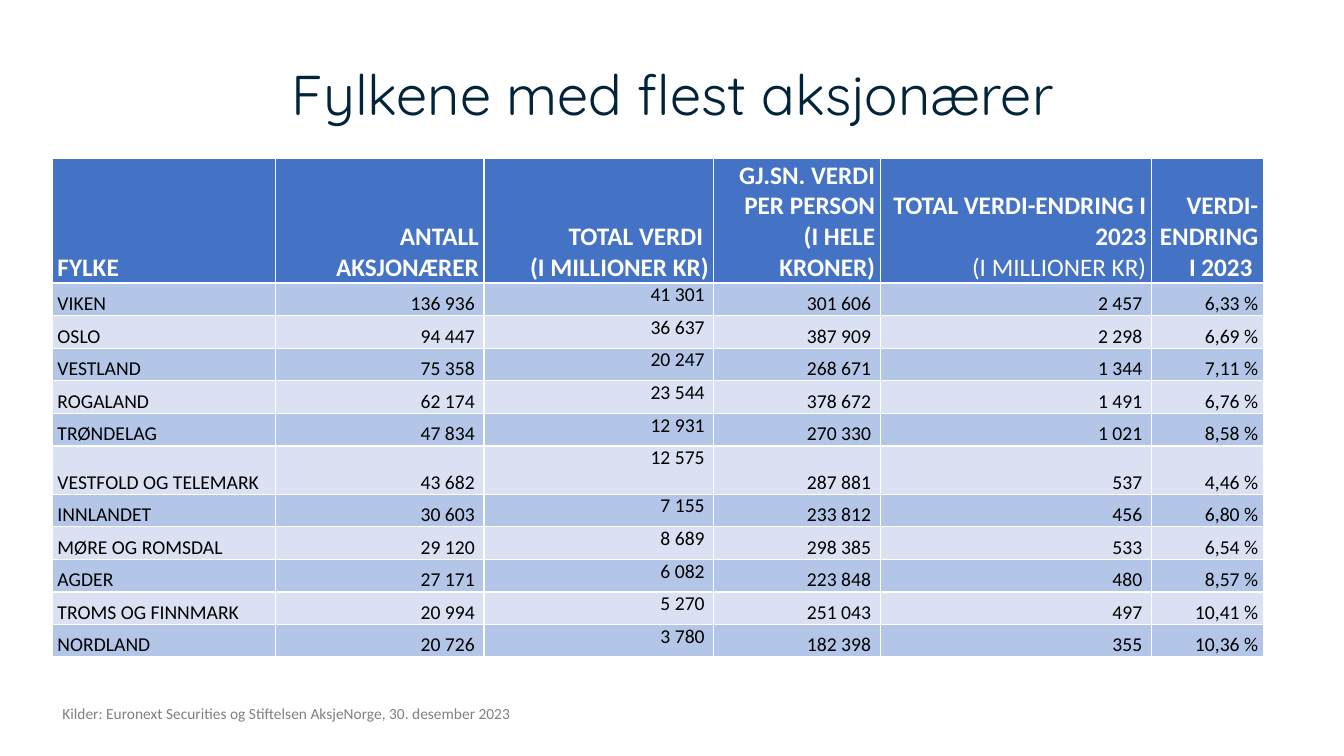
from lxml.etree import SubElement
from pptx import Presentation
from pptx.dml.color import RGBColor
from pptx.enum.text import MSO_ANCHOR as ANCHOR, MSO_AUTO_SIZE as FIT, PP_ALIGN as ALIGN
from pptx.oxml.ns import qn
from pptx.util import Inches, Pt

NAVY = RGBColor(0x02, 0x24, 0x3A)
GREY = RGBColor(0x80, 0x80, 0x80)
WHITE = RGBColor(0xFF, 0xFF, 0xFF)
BLACK = RGBColor(0x00, 0x00, 0x00)
HEADER_BLUE = RGBColor(0x44, 0x72, 0xC4)
BANDS = (RGBColor(0xB4, 0xC6, 0xE7), RGBColor(0xD9, 0xE1, 0xF2))

TITLE_FONT, BODY_FONT = "Quicksand", "Calibri"
MARGIN = 0.52
COL_WIDTHS = (2.21, 2.07, 2.28, 1.65, 2.69, 1.11)
HEADER_HEIGHT, TALL_HEIGHT = 1.24, 0.48
TALL_ROW = "VESTFOLD OG TELEMARK"
TOTAL_COL, CHANGE_COL, PERCENT_COL = 2, 4, 5

HEADERS = (
    "FYLKE",
    "ANTALL\nAKSJONÆRER",
    "TOTAL VERDI \n(I MILLIONER KR)",
    "GJ.SN. VERDI\nPER PERSON\n(I HELE KRONER)",
    "TOTAL VERDI-ENDRING I 2023",
    "VERDI-ENDRING I 2023 ",
)
CHANGE_UNIT = "(I MILLIONER KR)"
COUNTIES = (
    ("VIKEN", "136 936", "41 301", "301 606", "2 457", "6,33 %"),
    ("OSLO", "94 447", "36 637", "387 909", "2 298", "6,69 %"),
    ("VESTLAND", "75 358", "20 247", "268 671", "1 344", "7,11 %"),
    ("ROGALAND", "62 174", "23 544", "378 672", "1 491", "6,76 %"),
    ("TRØNDELAG", "47 834", "12 931", "270 330", "1 021", "8,58 %"),
    ("VESTFOLD OG TELEMARK", "43 682", "12 575", "287 881", "537", "4,46 %"),
    ("INNLANDET", "30 603", "7 155", "233 812", "456", "6,80 %"),
    ("MØRE OG ROMSDAL", "29 120", "8 689", "298 385", "533", "6,54 %"),
    ("AGDER", "27 171", "6 082", "223 848", "480", "8,57 %"),
    ("TROMS OG FINNMARK", "20 994", "5 270", "251 043", "497", "10,41 %"),
    ("NORDLAND", "20 726", "3 780", "182 398", "355", "10,36 %"),
)


def set_font(p, name, size, color, bold=None):
    p.font.name, p.font.size, p.font.bold = name, Pt(size), bold
    p.font.color.rgb = color


def add_title(s, text, box):
    title = s.shapes.title
    title.left, title.top, title.width, title.height = map(Inches, box)
    tf = title.text_frame
    tf.text = text
    tf.auto_size = FIT.NONE
    tf.vertical_anchor = ANCHOR.MIDDLE
    p = tf.paragraphs[0]
    p.alignment = ALIGN.CENTER
    set_font(p, TITLE_FONT, 40, NAVY)


def add_source_line(s, text, box):
    tf = s.shapes.add_textbox(*map(Inches, box)).text_frame
    tf.text = text
    set_font(tf.paragraphs[0], BODY_FONT, 11, GREY)


def add_border(cell, side, width):
    line = SubElement(cell._tc.get_or_add_tcPr(), qn(f"a:ln{side}"), w=str(Pt(width)))
    fill = SubElement(line, qn("a:solidFill"))
    SubElement(fill, qn("a:srgbClr"), val=str(WHITE))


def style_cell(cell, row, col):
    """Set borders, fill, margins and text format by the cell's place."""
    header = row == 0
    cell.margin_left = cell.margin_right = Inches(0.05)
    cell.margin_top = cell.margin_bottom = 0
    cell.vertical_anchor = ANCHOR.BOTTOM
    if not header:
        if col == TOTAL_COL:
            cell.vertical_anchor = ANCHOR.TOP
        if 0 < col < PERCENT_COL:
            cell.margin_right = Inches(0.09)

    widths = {"L": 1, "R": 1, "T": 1.5 if row == 1 else 1, "B": 1.5 if header else 1}
    for side, width in widths.items():
        add_border(cell, side, width)
    cell.fill.solid()
    cell.fill.fore_color.rgb = HEADER_BLUE if header else BANDS[(row - 1) % 2]

    p = cell.text_frame.paragraphs[0]
    p.alignment = ALIGN.RIGHT if col else ALIGN.LEFT
    set_font(p, BODY_FONT, 18 if header else 14, WHITE if header else BLACK, header)


def add_county_table(s, box):
    rows = (HEADERS, *COUNTIES)
    table = s.shapes.add_table(len(rows), len(HEADERS), *map(Inches, box)).table
    table.horz_banding = False
    for column, width in zip(table.columns, COL_WIDTHS):
        column.width = Inches(width)

    row_height = (box[3] - HEADER_HEIGHT - TALL_HEIGHT) / (len(COUNTIES) - 1)
    heights = {HEADERS[0]: HEADER_HEIGHT, TALL_ROW: TALL_HEIGHT}
    for i, texts in enumerate(rows):
        table.rows[i].height = Inches(heights.get(texts[0], row_height))
        for j, text in enumerate(texts):
            cell = table.cell(i, j)
            cell.text_frame.paragraphs[0].text = text
            style_cell(cell, i, j)

    p = table.cell(0, CHANGE_COL).text_frame.paragraphs[0]
    p.add_line_break()
    r = p.add_run()
    r.text = CHANGE_UNIT
    r.font.bold = False


def main():
    prs = Presentation()
    prs.slide_width, prs.slide_height = Inches(13.33), Inches(7.5)
    s = prs.slides.add_slide(prs.slide_layouts[5])
    add_title(s, "Fylkene med flest aksjonærer", (0.67, 0.3, 12, 1.25))
    add_county_table(s, (MARGIN, 1.57, sum(COL_WIDTHS), 4.95))
    add_source_line(
        s,
        "Kilder: Euronext Securities og Stiftelsen AksjeNorge, 30. desember 2023",
        (MARGIN, 6.94, 4.84, 0.29),
    )
    prs.save("out.pptx")


if __name__ == "__main__":
    main()
